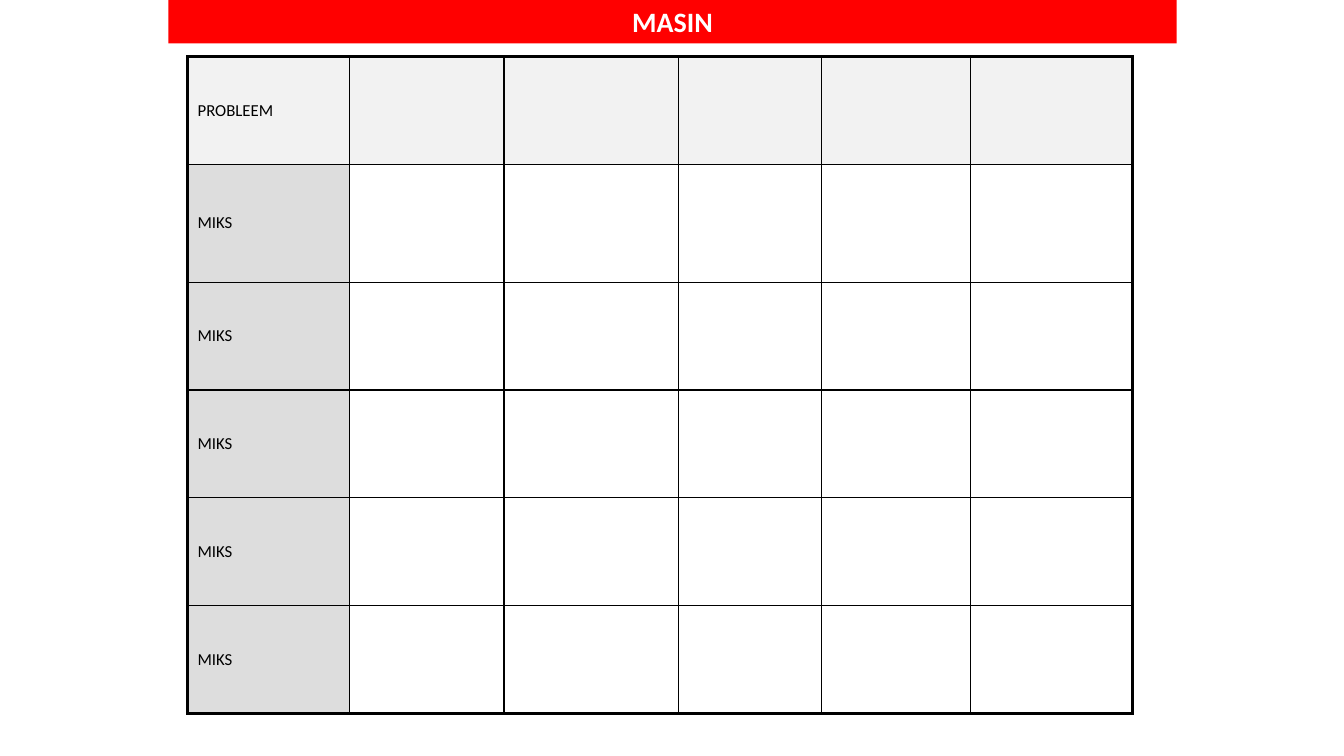
from dataclasses import dataclass

from lxml import etree
from pptx import Presentation
from pptx.dml.color import RGBColor
from pptx.enum import shapes, text
from pptx.oxml import ns
from pptx.util import Inches, Pt


@dataclass(frozen=True)
class Theme:
    font: str = "Calibri"
    title_size: float = 20
    label_size: float = 12
    banner: str = "FF0000"
    banner_text: str = "FFFFFF"
    ink: str = "000000"
    header_fill: str = "E7E6E6"
    header_opacity: int = 50
    label_fill: str = "DDDDDD"
    inner_line: float = 1
    outer_line: float = 2.25


THEME = Theme()
ROW_LABELS = ["PROBLEEM"] + ["MIKS"] * 5
COL_WIDTHS = [1.61, 1.53, 1.73, 1.42, 1.48, 1.6]
ROW_HEIGHTS = [1.07, 1.17, 1.07, 1.07, 1.07, 1.07]


def style_text(p, size, color, bold=False):
    for r in p.runs:
        r.font.name = THEME.font
        r.font.size = Pt(size)
        r.font.bold = bold
        r.font.color.rgb = RGBColor.from_string(color)


def add_banner(s, title):
    sp = s.shapes.add_shape(shapes.MSO_SHAPE.RECTANGLE,
                            Inches(1.67), 0, Inches(10), Inches(0.43))
    sp.shadow.inherit = False
    sp.fill.solid()
    sp.fill.fore_color.rgb = RGBColor.from_string(THEME.banner)
    sp.line.fill.background()
    tf = sp.text_frame
    tf.word_wrap = True
    tf.auto_size = text.MSO_AUTO_SIZE.SHAPE_TO_FIT_TEXT
    tf.vertical_anchor = text.MSO_ANCHOR.TOP
    tf.text = title
    p = tf.paragraphs[0]
    p.alignment = text.PP_ALIGN.CENTER
    style_text(p, THEME.title_size, THEME.banner_text, bold=True)


def set_borders(cell, outer_sides):
    """Draw all four borders, heavier on the sides at the table's edge."""
    tc_pr = cell._tc.get_or_add_tcPr()
    for side in "LRTB":
        width = THEME.outer_line if side in outer_sides else THEME.inner_line
        ln = etree.SubElement(tc_pr, ns.qn(f"a:ln{side}"), w=str(Pt(width)))
        fill = etree.SubElement(ln, ns.qn("a:solidFill"))
        etree.SubElement(fill, ns.qn("a:srgbClr"), val=THEME.ink)


def fill_cell(cell, color, opacity=100):
    cell.fill.solid()
    cell.fill.fore_color.rgb = RGBColor.from_string(color)
    if opacity < 100:
        clr = cell._tc.tcPr.find(ns.qn("a:solidFill")).find(ns.qn("a:srgbClr"))
        etree.SubElement(clr, ns.qn("a:alpha"), val=str(opacity * 1000))


def add_why_table(s):
    n_rows, n_cols = len(ROW_HEIGHTS), len(COL_WIDTHS)
    table = s.shapes.add_table(
        n_rows, n_cols, Inches(1.86), Inches(0.56),
        Inches(sum(COL_WIDTHS)), Inches(sum(ROW_HEIGHTS))).table
    table.first_row = table.horz_banding = False
    for column, width in zip(table.columns, COL_WIDTHS):
        column.width = Inches(width)
    for i, (row, height) in enumerate(zip(table.rows, ROW_HEIGHTS)):
        row.height = Inches(height)
        for j, cell in enumerate(row.cells):
            edges = {"T": i == 0, "B": i == n_rows - 1,
                     "L": j == 0, "R": j == n_cols - 1}
            set_borders(cell, [side for side, outer in edges.items() if outer])
            if i == 0:
                fill_cell(cell, THEME.header_fill, THEME.header_opacity)
            elif j == 0:
                fill_cell(cell, THEME.label_fill)
            else:
                cell.fill.background()
        label = row.cells[0]
        label.vertical_anchor = text.MSO_ANCHOR.MIDDLE
        label.text_frame.text = ROW_LABELS[i]
        style_text(label.text_frame.paragraphs[0], THEME.label_size, THEME.ink)


def main():
    prs = Presentation()
    prs.slide_width, prs.slide_height = Inches(13.33), Inches(7.5)
    s = prs.slides.add_slide(prs.slide_layouts[6])
    add_banner(s, "MASIN")
    add_why_table(s)
    prs.save("out.pptx")


if __name__ == "__main__":
    main()
